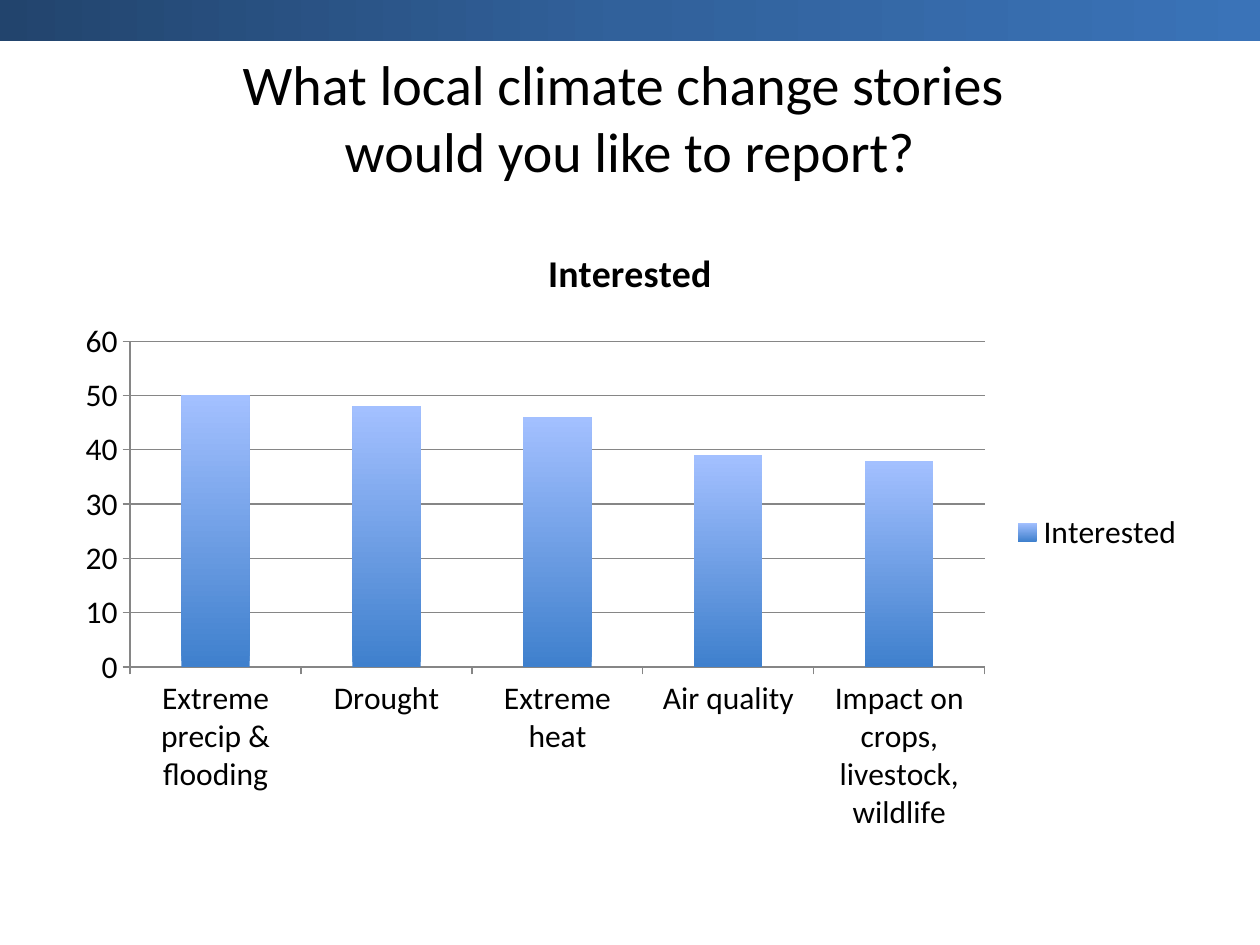
"""Build a slide with a column chart of local climate change story interest."""
import copy

import pptx
import pptx.chart.data
import pptx.dml.color
import pptx.enum.chart
import pptx.enum.shapes
import pptx.enum.text
import pptx.oxml.ns
import pptx.util
from pptx.util import Inches

COLORS = {
    "text": "000000",
    "axis": "868686",
    "bar_bottom": "3F80CD",
    "bar_top": "A3C0FF",
    "band_left": "22446D",
    "band_middle": "31619B",
    "band_right": "3A73B8",
}


def rgb(name):
    return pptx.dml.color.RGBColor.from_string(COLORS[name])


def style_font(font, size, bold=False):
    font.name = "Calibri"
    font.size = pptx.util.Pt(size)
    font.bold = bold
    font.color.rgb = rgb("text")


prs = pptx.Presentation()
prs.slide_width = Inches(10)
prs.slide_height = Inches(7.5)
s = prs.slides.add_slide(prs.slide_layouts[6])

title = s.shapes.add_textbox(Inches(0.5), Inches(0.3), Inches(9), Inches(1.25))
tf = title.text_frame
tf.word_wrap = True
tf.vertical_anchor = pptx.enum.text.MSO_ANCHOR.MIDDLE
p = tf.paragraphs[0]
p.text = "What local climate change stories \vwould you like to report?"
p.alignment = pptx.enum.text.PP_ALIGN.CENTER
style_font(p.font, 32)

data = pptx.chart.data.CategoryChartData()
data.categories = [
    "Extreme precip & flooding",
    "Drought",
    "Extreme heat",
    "Air quality",
    "Impact on crops, livestock, wildlife",
]
data.add_series("Interested", [50, 48, 46, 39, 38])
chart = s.shapes.add_chart(
    pptx.enum.chart.XL_CHART_TYPE.COLUMN_STACKED,
    Inches(0.5), Inches(1.75), Inches(9), Inches(4.95), data,
).chart
style_font(chart.font, 18)

chart.has_title = True
p = chart.chart_title.text_frame.paragraphs[0]
p.text = "Interested"
style_font(p.font, 21.6, bold=True)

chart.has_legend = True
chart.legend.position = pptx.enum.chart.XL_LEGEND_POSITION.RIGHT
chart.legend.include_in_layout = False

value_axis = chart.value_axis
value_axis.minimum_scale = 0
value_axis.maximum_scale = 60
value_axis.major_unit = 10
value_axis.has_major_gridlines = True
for axis in (chart.category_axis, value_axis):
    axis.major_tick_mark = pptx.enum.chart.XL_TICK_MARK.OUTSIDE
for lines in (chart.category_axis, value_axis, value_axis.major_gridlines):
    lines.format.line.color.rgb = rgb("axis")
    lines.format.line.width = pptx.util.Pt(0.75)

plot = chart.plots[0]
plot.gap_width = 150
plot.overlap = 100
plot.vary_by_categories = False
fill = plot.series[0].format.fill
fill.gradient()
fill.gradient_angle = 90
for stop, name in zip(fill.gradient_stops, ("bar_bottom", "bar_top")):
    stop.color.rgb = rgb(name)

band = s.shapes.add_shape(
    pptx.enum.shapes.MSO_SHAPE.RECTANGLE, 0, 0, prs.slide_width, Inches(0.33)
)
band.shadow.inherit = False
band.line.fill.background()
band.fill.gradient()
band.fill.gradient_angle = 0
stops = band._element.spPr.find(".//" + pptx.oxml.ns.qn("a:gsLst"))
stops.insert(1, copy.deepcopy(stops[0]))
band_stops = ((0, "band_left"), (0.5, "band_middle"), (1, "band_right"))
for stop, (position, name) in zip(band.fill.gradient_stops, band_stops):
    stop.position = position
    stop.color.rgb = rgb(name)

prs.save("out.pptx")
